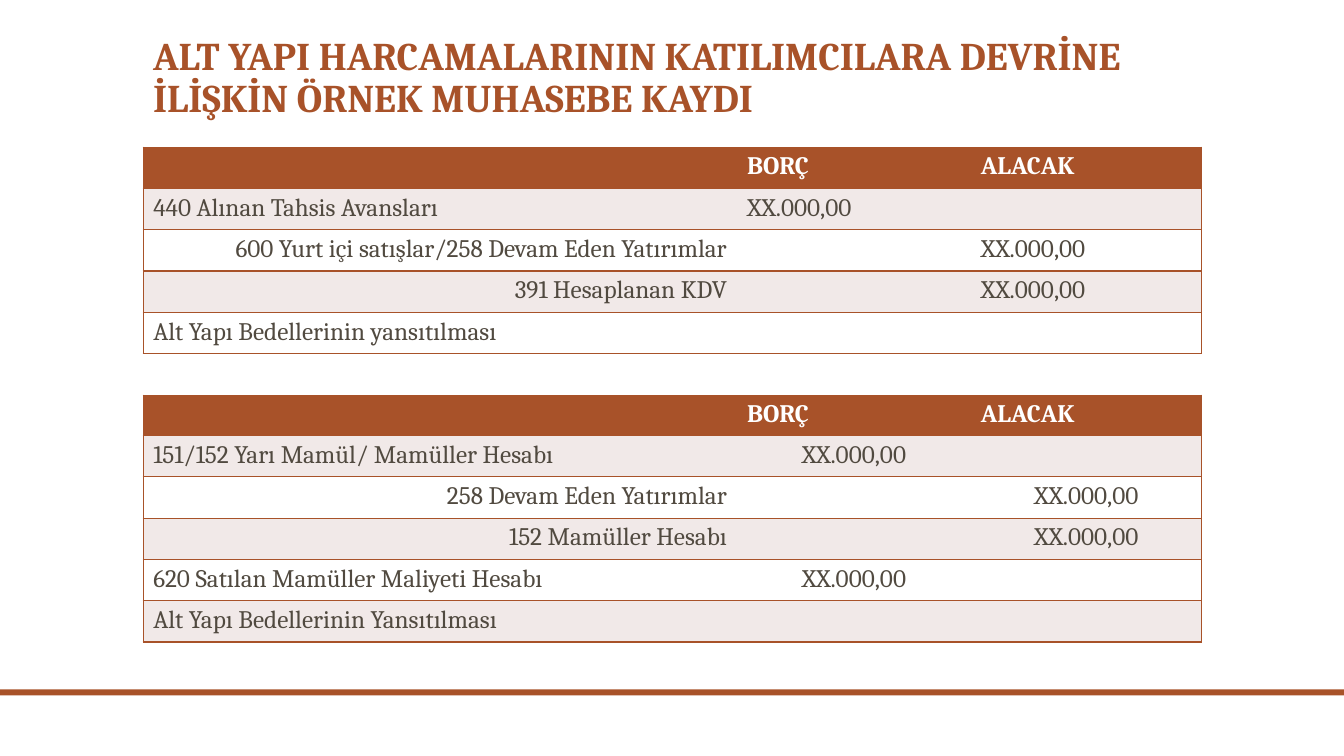
from dataclasses import dataclass

from lxml.etree import SubElement
from pptx import Presentation
from pptx.dml.color import RGBColor
from pptx.enum.shapes import MSO_SHAPE
from pptx.enum.text import MSO_ANCHOR, PP_ALIGN
from pptx.oxml.ns import qn
from pptx.util import Inches, Pt

TITLE = "ALT YAPI HARCAMALARININ KATILIMCILARA DEVRİNE İLİŞKİN ÖRNEK MUHASEBE KAYDI"
HEADER = ("", "BORÇ", "ALACAK")
AMOUNT = "XX.000,00"

# Each entry: account, debit, credit; credited accounts are set to the right.
TRANSFER_ENTRIES = [
    ("440 Alınan Tahsis Avansları", AMOUNT, ""),
    ("600 Yurt içi satışlar/258 Devam Eden Yatırımlar", "", AMOUNT),
    ("391 Hesaplanan KDV", "", AMOUNT),
    ("Alt Yapı Bedellerinin yansıtılması", "", ""),
]
COST_ENTRIES = [
    ("151/152 Yarı Mamül/ Mamüller Hesabı", AMOUNT, ""),
    ("258 Devam Eden Yatırımlar", "", AMOUNT),
    ("152 Mamüller Hesabı", "", AMOUNT),
    ("620 Satılan Mamüller Maliyeti Hesabı", AMOUNT, ""),
    ("Alt Yapı Bedellerinin Yansıtılması", "", ""),
]
# Each journal: top, header height, amount alignment, entries.
JOURNALS = [
    (1.46, 0.41, PP_ALIGN.LEFT, TRANSFER_ENTRIES),
    (3.92, 0.38, PP_ALIGN.CENTER, COST_ENTRIES),
]

LEFT = 1.42
COLUMN_WIDTHS = (5.89, 2.32, 2.29)
ROW_HEIGHT = 0.41


@dataclass(frozen=True)
class Theme:
    font: str = "Cambria"
    accent: str = "A85229"
    text: str = "514A40"
    band: str = "F1E9E8"
    white: str = "FFFFFF"
    title_size: int = 28
    table_size: int = 18
    border_width: int = 1


THEME = Theme()


def set_font(paragraph, size, color, bold):
    font = paragraph.font
    font.name, font.size, font.bold = THEME.font, Pt(size), bold
    font.color.rgb = RGBColor.from_string(color)


def fill_solid(target, color):
    target.fill.solid()
    target.fill.fore_color.rgb = RGBColor.from_string(color)


def set_borders(cell, visible_sides):
    """Draw the named sides (L, R, T, B) and clear the others; call before filling."""
    properties = cell._tc.get_or_add_tcPr()
    for side in "LRTB":
        line = SubElement(properties, qn(f"a:ln{side}"), w=str(Pt(THEME.border_width)))
        if side in visible_sides:
            solid = SubElement(line, qn("a:solidFill"))
            SubElement(solid, qn("a:srgbClr"), val=THEME.accent)
        else:
            SubElement(line, qn("a:noFill"))


def add_title(page):
    box = page.shapes.add_textbox(Inches(LEFT), Inches(0.28), Inches(11.09), Inches(0.97))
    frame = box.text_frame
    frame.word_wrap = True
    frame.vertical_anchor = MSO_ANCHOR.BOTTOM
    paragraph = frame.paragraphs[0]
    paragraph.text = TITLE
    paragraph.line_spacing = 0.9
    set_font(paragraph, THEME.title_size, THEME.accent, True)


def add_footer_rule(page, width):
    rule = page.shapes.add_shape(MSO_SHAPE.RECTANGLE, 0, Inches(6.84), width, Inches(0.06))
    rule.shadow.inherit = False
    fill_solid(rule, THEME.accent)
    rule.line.fill.background()


def add_journal(page, top, header_height, amount_alignment, entries):
    rows = [HEADER, *entries]
    heights = [header_height] + [ROW_HEIGHT] * len(entries)
    table = page.shapes.add_table(
        len(rows), len(HEADER), Inches(LEFT), Inches(top),
        Inches(sum(COLUMN_WIDTHS)), Inches(sum(heights)),
    ).table
    for column, width in zip(table.columns, COLUMN_WIDTHS):
        column.width = Inches(width)
    last_column = len(HEADER) - 1
    for row_index, (values, height) in enumerate(zip(rows, heights)):
        table.rows[row_index].height = Inches(height)
        is_header = row_index == 0
        if is_header:
            background, color = THEME.accent, THEME.white
        else:
            background = THEME.band if row_index % 2 else THEME.white
            color = THEME.text
        for column_index, value in enumerate(values):
            cell = table.cell(row_index, column_index)
            set_borders(cell, "TB" + {0: "L", last_column: "R"}.get(column_index, ""))
            fill_solid(cell, background)
            paragraph = cell.text_frame.paragraphs[0]
            paragraph.text = value
            if is_header:
                paragraph.alignment = PP_ALIGN.LEFT
            elif column_index > 0:
                paragraph.alignment = amount_alignment
            else:
                paragraph.alignment = PP_ALIGN.RIGHT if values[-1] else PP_ALIGN.LEFT
            set_font(paragraph, THEME.table_size, color, is_header)


def main():
    deck = Presentation()
    deck.slide_width, deck.slide_height = Inches(13.33), Inches(7.5)
    page = deck.slides.add_slide(deck.slide_layouts[6])
    add_footer_rule(page, deck.slide_width)
    add_title(page)
    for journal in JOURNALS:
        add_journal(page, *journal)
    deck.save("out.pptx")


if __name__ == "__main__":
    main()
